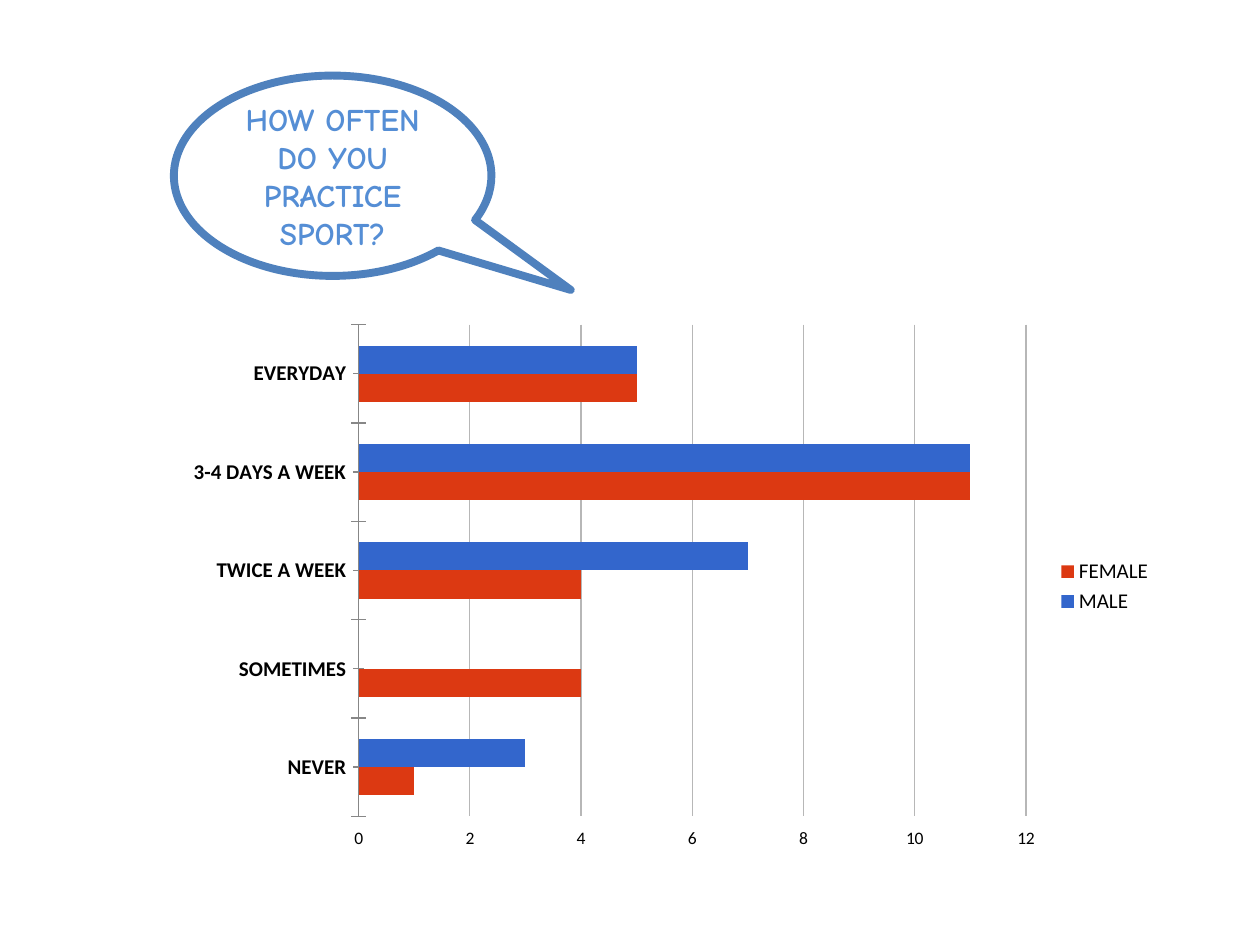
from pptx import Presentation
from pptx.chart.data import CategoryChartData
from pptx.dml.color import RGBColor
from pptx.enum.chart import XL_CHART_TYPE as ChartType
from pptx.enum.chart import XL_LEGEND_POSITION as LegendPosition
from pptx.enum.chart import XL_TICK_LABEL_POSITION as LabelPosition
from pptx.enum.chart import XL_TICK_MARK as TickMark
from pptx.enum.shapes import MSO_SHAPE as Preset
from pptx.enum.text import MSO_ANCHOR as Anchor
from pptx.enum.text import PP_ALIGN as Align
from pptx.util import Pt

LEFT = 99.36
FREQUENCIES = ["EVERYDAY", "3-4 DAYS A WEEK", "TWICE A WEEK", "SOMETIMES", "NEVER"]
ANSWERS = {
    "MALE": ([5, 11, 7, None, 3], "3366CC"),
    "FEMALE": ([5, 11, 4, 4, 1], "DC3912"),
}
CROSS_TICKS = {"major_tick_mark": TickMark.CROSS, "minor_tick_mark": TickMark.CROSS}


def color(value):
    return RGBColor.from_string(value)


def apply(target, values):
    for key, value in values.items():
        setattr(target, key, value)


def paint(fill, value):
    fill.solid()
    fill.fore_color.rgb = color(value)


def draw_line(line, value, width):
    paint(line.fill, value)
    line.width = Pt(width)


def style_font(font, value, **values):
    apply(font, values)
    font.color.rgb = color(value)


def add_question(slide, wording):
    bubble = slide.shapes.add_shape(
        Preset.OVAL_CALLOUT, Pt(LEFT), Pt(43.2), Pt(181.44), Pt(114.48))
    bubble.shadow.inherit = False
    bubble.adjustments[0] = 0.75
    bubble.adjustments[1] = 0.57
    paint(bubble.fill, "FFFFFF")
    draw_line(bubble.line, "4F81BD", 4.5)
    apply(bubble.text_frame, {"word_wrap": True, "vertical_anchor": Anchor.MIDDLE})
    question = bubble.text_frame.paragraphs[0]
    question.alignment = Align.CENTER
    run = question.add_run()
    run.text = wording
    style_font(run.font, "558ED5", name="Comic Neue", size=Pt(18), bold=True)


def style_axes(chart):
    frequency_axis, count_axis = chart.category_axis, chart.value_axis
    apply(frequency_axis, {
        **CROSS_TICKS,
        "reverse_order": True,
        "has_major_gridlines": False,
    })
    draw_line(frequency_axis.format.line, "878787", 0.75)
    style_font(frequency_axis.tick_labels.font, "000000",
               name="Calibri", size=Pt(12), bold=True)
    apply(count_axis, {
        **CROSS_TICKS,
        "minimum_scale": 0,
        "maximum_scale": 12,
        "major_unit": 2,
        "tick_label_position": LabelPosition.HIGH,
        "has_major_gridlines": True,
    })
    count_axis.format.line.fill.background()
    draw_line(count_axis.major_gridlines.format.line, "B7B7B7", 0.75)


def add_answers(slide):
    data = CategoryChartData()
    data.categories = FREQUENCIES
    for group, (counts, _) in ANSWERS.items():
        data.add_series(group, counts)
    chart = slide.shapes.add_chart(
        ChartType.BAR_CLUSTERED, Pt(LEFT), Pt(179.28), Pt(566.64), Pt(311.76), data).chart
    apply(chart, {"has_title": False, "has_legend": True})
    style_font(chart.font, "000000", name="Calibri", size=Pt(10))
    apply(chart.legend, {"position": LegendPosition.RIGHT, "include_in_layout": False})
    style_font(chart.legend.font, "000000", name="Calibri", size=Pt(12))
    bars = chart.plots[0]
    apply(bars, {"gap_width": 150, "overlap": 0, "vary_by_categories": False})
    for group in bars.series:
        group.invert_if_negative = False
        paint(group.format.fill, ANSWERS[group.name][1])
    style_axes(chart)


def main():
    deck = Presentation()
    apply(deck, {"slide_width": Pt(720), "slide_height": Pt(540)})
    slide = deck.slides.add_slide(deck.slide_layouts[6])
    add_question(slide, "HOW OFTEN DO YOU PRACTICE SPORT?")
    add_answers(slide)
    deck.save("out.pptx")


if __name__ == "__main__":
    main()
